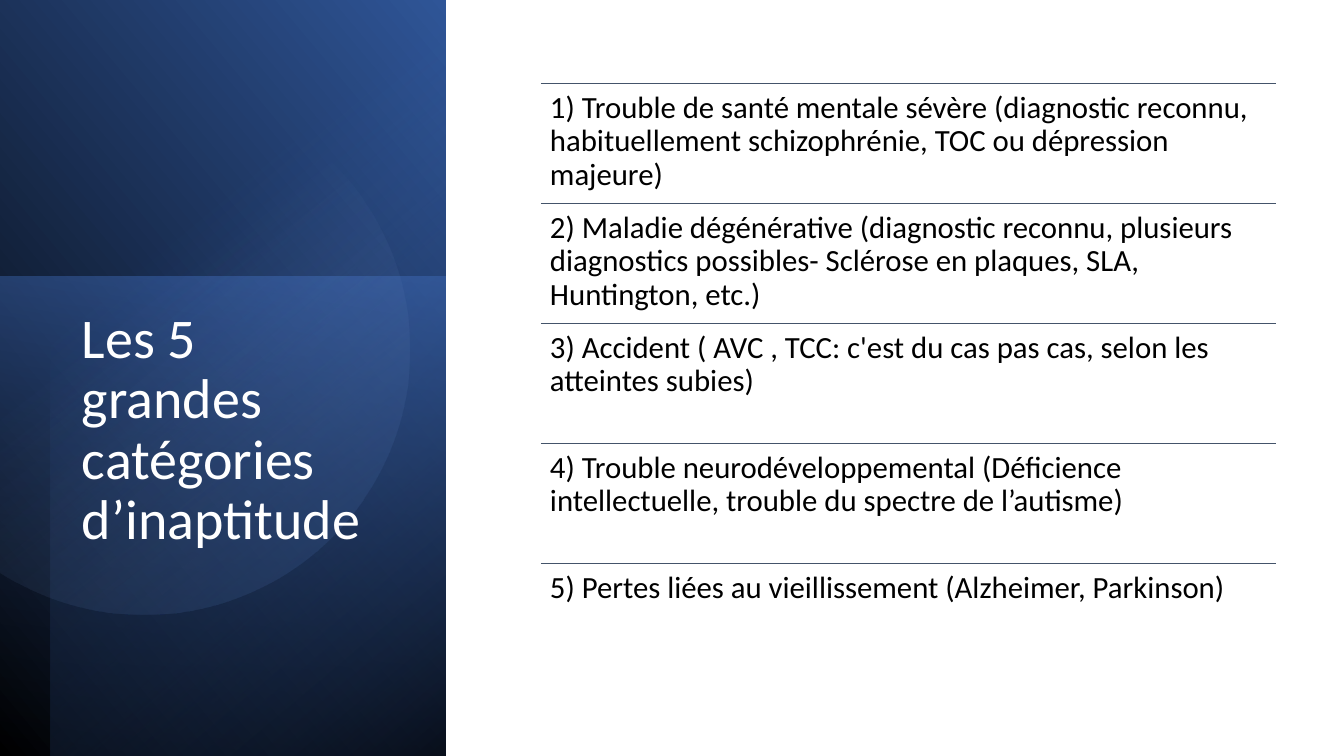
from math import acos, cos, degrees, radians, sin

from pptx import Presentation
from pptx.dml.color import RGBColor
from pptx.enum.shapes import MSO_CONNECTOR as CONNECTOR, MSO_SHAPE as SHAPE
from pptx.enum.text import MSO_ANCHOR as ANCHOR, MSO_AUTO_SIZE as AUTO_SIZE, PP_ALIGN as ALIGN
from pptx.oxml import parse_xml
from pptx.oxml.ns import nsdecls
from pptx.util import Pt

TITLE = "Les 5 grandes catégories d’inaptitude"
CATEGORIES = [
    "1) Trouble de santé mentale sévère (diagnostic reconnu, habituellement schizophrénie, TOC ou dépression majeure)",
    "2) Maladie dégénérative (diagnostic reconnu, plusieurs diagnostics possibles- Sclérose en plaques, SLA, Huntington, etc.)",
    "3) Accident ( AVC , TCC: c'est du cas pas cas, selon les atteintes subies)",
    "4) Trouble neurodéveloppemental (Déficience intellectuelle, trouble du spectre de l’autisme)",
    "5) Pertes liées au vieillissement (Alzheimer, Parkinson)",
]
# box in px, rotation, flipped, gradient angle, stops (position %, colour, opacity %)
PANELS = [
    ((-156, 156, 758, 446), 90, True, 310, [(0, "000000", 100), (100, "2F5597", 100)]),
    ((-17, 293, 480, 446), 270, False, 190, [(0, "4472C4", 50), (100, "203864", 0)]),
    ((-130, 180, 756, 395), 270, True, 220, [(0, "000000", 59), (69, "4472C4", 0)]),
]
DISC_X, DISC_Y, DISC_R = 144, 350, 265
DISC_ANGLE, DISC_STOPS = 52, [(39, "8FAADC", 0), (100, "2F5597", 26)]
TITLE_BOX = (73, 305, 317, 339)
LIST_LEFT, LIST_TOP, LIST_WIDTH, ROW_HEIGHT = 541, 83, 735, 120
FONT = "Calibri"


def px(n):
    return round(n * 914400 / 100.8)


def color(value):
    return RGBColor.from_string(value)


def fill_gradient(sp, angle, stops):
    """Fill with a linear gradient whose stops may be transparent; no outline or shadow."""
    sp.shadow.inherit = False
    sp.line.fill.background()
    gs = "".join(
        f'<a:gs pos="{pos * 1000}"><a:srgbClr val="{value}"><a:alpha val="{alpha * 1000}"/></a:srgbClr></a:gs>'
        for pos, value, alpha in stops)
    grad = parse_xml(f'<a:gradFill rotWithShape="1" {nsdecls("a")}><a:gsLst>{gs}</a:gsLst>'
                     f'<a:lin ang="{angle * 60000}" scaled="0"/></a:gradFill>')
    sp._element.spPr.insert(2, grad)  # after the transform and the geometry


def write(sp, text, size, value):
    tf = sp.text_frame
    tf.text = text
    tf.word_wrap = True
    tf.auto_size = AUTO_SIZE.NONE
    tf.vertical_anchor = ANCHOR.TOP
    tf.margin_left = tf.margin_right = px(9)
    p = tf.paragraphs[0]
    p.alignment = ALIGN.LEFT
    p.line_spacing = 0.9
    font = p.runs[0].font
    font.name, font.size = FONT, Pt(size)
    font.color.rgb = color(value)
    return tf


def add_panel(shapes, box, rotation, flipped, angle, stops):
    sp = shapes.add_shape(SHAPE.RECTANGLE, *map(px, box))
    sp.rotation = rotation
    if flipped:
        sp._element.spPr.xfrm.set("flipH", "1")
    fill_gradient(sp, angle, stops)


def add_disc(shapes):
    """Draw the disc, cut off by the left edge of the slide."""
    limit, steps = degrees(acos(-DISC_X / DISC_R)), 120
    angles = [radians(limit * (2 * i / steps - 1)) for i in range(steps + 1)]
    points = [(px(DISC_X + DISC_R * cos(a)), px(DISC_Y + DISC_R * sin(a))) for a in angles]
    builder = shapes.build_freeform(*points[0])
    builder.add_line_segments(points[1:], close=True)
    fill_gradient(builder.convert_to_shape(), DISC_ANGLE, DISC_STOPS)


def add_category(shapes, text, top):
    rule = shapes.add_connector(CONNECTOR.STRAIGHT, px(LIST_LEFT), px(top),
                                px(LIST_LEFT + LIST_WIDTH), px(top))
    rule.line.color.rgb = color("44546A")
    rule.line.width = Pt(0.5)
    rule._element.spPr.append(parse_xml(f'<a:effectLst {nsdecls("a")}/>'))
    box = shapes.add_textbox(px(LIST_LEFT), px(top), px(LIST_WIDTH), px(ROW_HEIGHT))
    tf = write(box, text, 22, "000000")
    tf.margin_top = tf.margin_bottom = px(9)


def main():
    prs = Presentation()
    prs.slide_width, prs.slide_height = px(1344), px(756)
    shapes = prs.slides.add_slide(prs.slide_layouts[5]).shapes
    for panel in PANELS:
        add_panel(shapes, *panel)
    add_disc(shapes)

    title = shapes.title
    title.left, title.top, title.width, title.height = map(px, TITLE_BOX)
    write(title, TITLE, 40, "FFFFFF")
    shapes._spTree.append(title._element)  # in front of the panels

    for i, text in enumerate(CATEGORIES):
        add_category(shapes, text, LIST_TOP + i * ROW_HEIGHT)
    prs.save("out.pptx")


if __name__ == "__main__":
    main()
